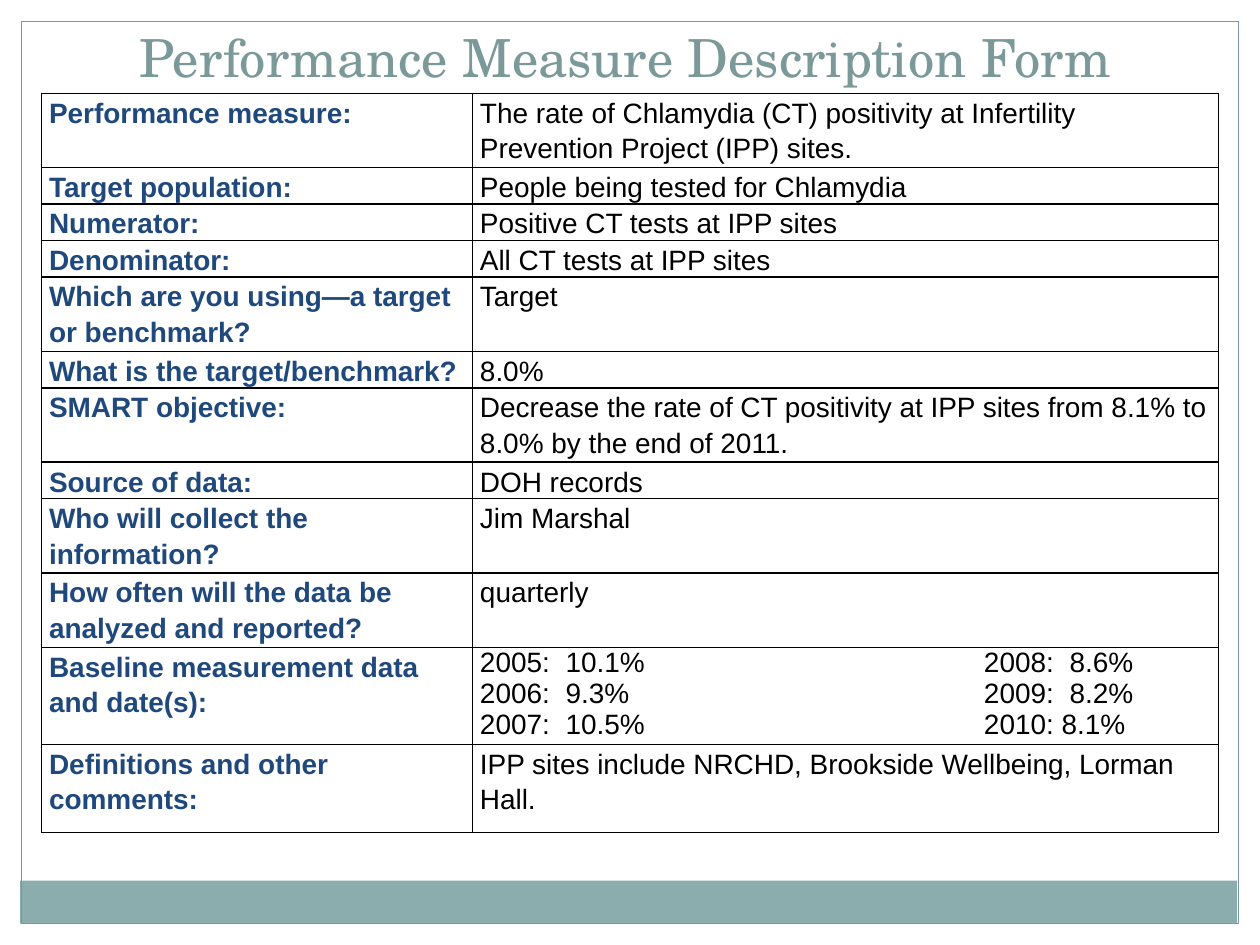
from dataclasses import dataclass
from lxml.etree import SubElement
from pptx import Presentation
from pptx.dml.color import RGBColor
from pptx.enum.shapes import MSO_SHAPE
from pptx.enum.text import MSO_ANCHOR, PP_ALIGN
from pptx.oxml.ns import qn
from pptx.util import Inches, Pt


@dataclass(frozen=True)
class Theme:
    margin: str = "FFFFFF"
    band: str = "8CADAE"
    accent: str = "7C999A"
    label: str = "1F497D"
    ink: str = "000000"
    title_font: str = "TeX Gyre Schola"
    body_font: str = "Arial"
    title_size: int = 30
    body_size: int = 16


theme = Theme()


def write(tf, text, font=theme.body_font, size=theme.body_size, color=theme.ink,
          bold=False, align=PP_ALIGN.LEFT, line=None, space=None, tabs=()):
    for i, words in enumerate(text.split("\n")):
        p = tf.add_paragraph() if i else tf.paragraphs[0]
        p.alignment = align
        p.line_spacing = line
        p.space_before = p.space_after = space
        if tabs:
            tab_list = SubElement(p._p.get_or_add_pPr(), qn("a:tabLst"))
            for pos in tabs:
                SubElement(tab_list, qn("a:tab"), pos=str(Inches(pos)), algn="l")
        r = p.add_run()
        r.text = words
        r.font.name = font
        r.font.size = Pt(size)
        r.font.bold = bold
        r.font.color.rgb = RGBColor.from_string(color)


def add_borders(cell, color, width):
    tc_pr = cell._tc.get_or_add_tcPr()
    for i, side in enumerate(("lnL", "lnR", "lnT", "lnB")):
        ln = tc_pr.makeelement(qn(f"a:{side}"), {"w": str(Pt(width))})
        fill = SubElement(ln, qn("a:solidFill"))
        SubElement(fill, qn("a:srgbClr"), val=color)
        tc_pr.insert(i, ln)


prs = Presentation()
prs.slide_width, prs.slide_height = Inches(10), Inches(7.5)
s = prs.slides.add_slide(prs.slide_layouts[5])

backdrop = [
    ((0, 0, 10, 0.17), theme.margin, None),
    ((9.83, 0, 0.17, 7.5), theme.margin, None),
    ((0, 0, 0.17, 7.5), theme.margin, None),
    ((0.16, 6.99, 9.66, 0.34), theme.band, None),
    ((0.17, 0.17, 9.66, 7.16), None, theme.accent),
]
for box, fill, line in backdrop:
    sp = s.shapes.add_shape(MSO_SHAPE.RECTANGLE, *map(Inches, box))
    sp.shadow.inherit = False
    if fill:
        sp.fill.solid()
        sp.fill.fore_color.rgb = RGBColor.from_string(fill)
    else:
        sp.fill.background()
    if line:
        sp.line.color.rgb = RGBColor.from_string(line)
        sp.line.width = Pt(0.75)
    else:
        sp.line.fill.background()

title = s.shapes.title
s.shapes._spTree.append(title._element)
title.left, title.top, title.width, title.height = Inches(0.34), Inches(0), Inches(9.25), Inches(0.75)
title.text_frame.vertical_anchor = MSO_ANCHOR.BOTTOM
write(title.text_frame, "Performance Measure Description Form", font=theme.title_font,
      size=theme.title_size, color=theme.accent, align=PP_ALIGN.CENTER)

ONE_LINE, TWO_LINES = 0.29, 0.59
rows = [
    (TWO_LINES, "Performance measure:",
     "The rate of Chlamydia (CT) positivity at Infertility Prevention Project (IPP) sites."),
    (ONE_LINE, "Target population:", "People being tested for Chlamydia"),
    (ONE_LINE, "Numerator:", "Positive CT tests at IPP sites"),
    (ONE_LINE, "Denominator:", "All CT tests at IPP sites"),
    (TWO_LINES, "Which are you using—a target or benchmark?", "Target"),
    (ONE_LINE, "What is the target/benchmark?", "8.0%"),
    (TWO_LINES, "SMART objective:",
     "Decrease the rate of CT positivity at IPP sites from 8.1% to 8.0% by the end of 2011."),
    (ONE_LINE, "Source of data:", "DOH records"),
    (TWO_LINES, "Who will collect the information?", "Jim Marshal"),
    (TWO_LINES, "How often will the data be analyzed and reported?", "quarterly"),
    (0.77, "Baseline measurement data and date(s):",
     "2005:\t10.1%\t2008:\t8.6%\n2006:\t9.3%\t2009:\t8.2%\n2007:\t10.5%\t2010: 8.1%"),
    (0.7, "Definitions and other comments:",
     "IPP sites include NRCHD, Brookside Wellbeing, Lorman Hall."),
]
widths = (3.42, 5.92)
heights = [height for height, _, _ in rows]
table = s.shapes.add_table(len(rows), len(widths), Inches(0.33), Inches(0.74),
                           Inches(sum(widths)), Inches(sum(heights))).table
table.first_row = table.horz_banding = False
for column, width in zip(table.columns, widths):
    column.width = Inches(width)

spaced = dict(line=1.15, space=Pt(4))
baseline = dict(tabs=(0.68, 4, 4.68))
for i, (height, label, answer) in enumerate(rows):
    table.rows[i].height = Inches(height)
    for cell in table.rows[i].cells:
        cell.margin_left = cell.margin_right = Inches(0.06)
        cell.margin_top = cell.margin_bottom = 0
        cell.fill.background()
        add_borders(cell, theme.ink, 1)
    write(table.cell(i, 0).text_frame, label, color=theme.label, bold=True, **spaced)
    write(table.cell(i, 1).text_frame, answer, **(baseline if "\t" in answer else spaced))

prs.save("out.pptx")
